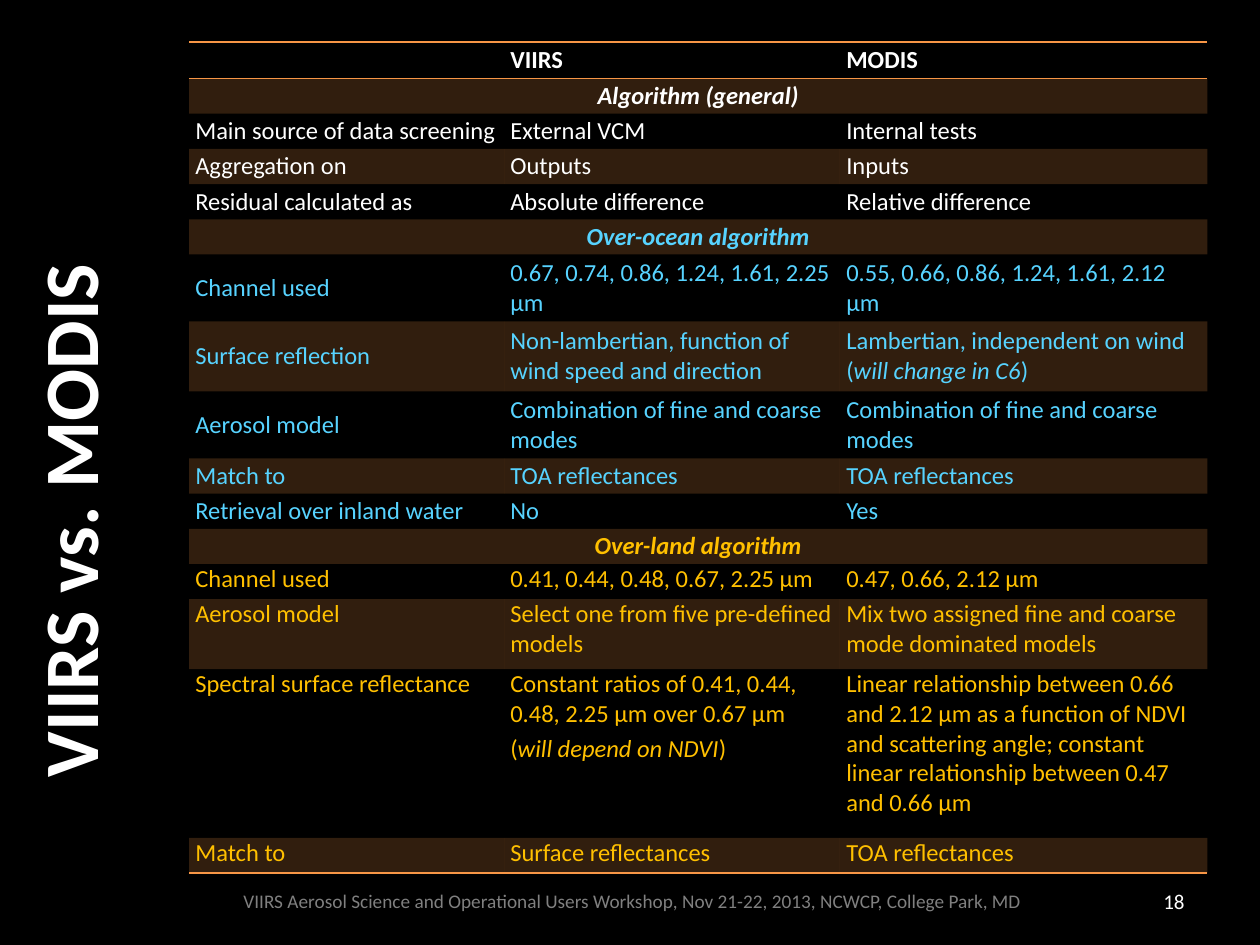
from lxml import etree
from pptx import Presentation
from pptx.dml.color import RGBColor
from pptx.enum.text import MSO_ANCHOR, PP_ALIGN
from pptx.oxml.ns import qn
from pptx.util import Pt

LEFT, CENTER, RIGHT = PP_ALIGN.LEFT, PP_ALIGN.CENTER, PP_ALIGN.RIGHT
TOP, MIDDLE = MSO_ANCHOR.TOP, MSO_ANCHOR.MIDDLE
NO_STYLE = "{2D5ABB26-0587-4C30-8999-92F81FD0307C}"
COLORS = {
    "background": "000000", "text": "FFFFFF", "footer": "808080",
    "accent": "F79646", "ocean": "57D3FF", "land": "FFC000",
}

# Table content: asterisks enclose italics, a line break starts a paragraph
HEADER = ("", "VIIRS", "MODIS")
SECTIONS = [
    ("Algorithm (general)", "text", MIDDLE, [
        ("Main source of data screening", "External VCM", "Internal tests"),
        ("Aggregation on", "Outputs", "Inputs"),
        ("Residual calculated as", "Absolute difference", "Relative difference"),
    ]),
    ("Over-ocean algorithm", "ocean", MIDDLE, [
        ("Channel used", "0.67, 0.74, 0.86, 1.24, 1.61, 2.25 µm",
         "0.55, 0.66, 0.86, 1.24, 1.61, 2.12 µm"),
        ("Surface reflection", "Non-lambertian, function of wind speed and direction",
         "Lambertian, independent on wind (*will change in C6*)"),
        ("Aerosol model", "Combination of fine and coarse modes",
         "Combination of fine and coarse modes"),
        ("Match to", "TOA reflectances", "TOA reflectances"),
        ("Retrieval over inland water", "No", "Yes"),
    ]),
    ("Over-land algorithm", "land", TOP, [
        ("Channel used", "0.41, 0.44, 0.48, 0.67, 2.25 µm", "0.47, 0.66, 2.12 µm"),
        ("Aerosol model", "Select one from five pre-defined models",
         "Mix two assigned fine and coarse mode dominated models"),
        ("Spectral surface reflectance",
         "Constant ratios of 0.41, 0.44, 0.48, 2.25 µm over 0.67 µm\n(*will depend on NDVI*)",
         "Linear relationship between 0.66 and 2.12 µm as a function of NDVI and "
         "scattering angle; constant linear relationship between 0.47 and 0.66 µm"),
        ("Match to", "Surface reflectances", "TOA reflectances"),
    ]),
]
COLUMN_WIDTHS = (180, 192, 210)
ROW_HEIGHT = 20.1
TALL_ROWS = {0: 20.9, 6: 38.3, 7: 40, 8: 38.3, 13: 40, 14: 96.5}


class SlideBuilder:
    font_name = "Calibri"

    def __init__(self, deck):
        self.slide = deck.slides.add_slide(deck.slide_layouts[5])
        fill = self.slide.background.fill
        fill.solid()
        fill.fore_color.rgb = RGBColor.from_string(COLORS["background"])

    def style(self, para, size, color, align=LEFT, bold=False, italic=None):
        para.alignment = align
        font = para.font
        font.name, font.size, font.bold = self.font_name, Pt(size), bold
        font.italic = italic
        font.color.rgb = RGBColor.from_string(COLORS[color])

    def title(self, text, left, top, width, height):
        box = self.slide.shapes.title
        box.left, box.top, box.width, box.height = map(Pt, (left, top, width, height))
        box.rotation = 270
        box.text_frame.text = text
        box.text_frame.vertical_anchor = MIDDLE
        self.style(box.text_frame.paragraphs[0], 44, "text", CENTER, bold=True)

    def text(self, text, left, top, width, height, size, color, align=LEFT):
        box = self.slide.shapes.add_textbox(*map(Pt, (left, top, width, height)))
        frame = box.text_frame
        frame.word_wrap = True
        frame.vertical_anchor = MIDDLE
        frame.text = text
        self.style(frame.paragraphs[0], size, color, align)

    def table(self, left, top, widths, heights):
        frame = self.slide.shapes.add_table(
            len(heights), len(widths), Pt(left), Pt(top), Pt(sum(widths)), Pt(sum(heights)))
        next(frame.element.iter(qn("a:tableStyleId"))).text = NO_STYLE
        table = frame.table
        table.first_row = table.horz_banding = False
        for column, width in zip(table.columns, widths):
            column.width = Pt(width)
        for row, height in zip(table.rows, heights):
            row.height = Pt(height)
        return table

    def cell(self, cell, text, color, anchor=MIDDLE, align=LEFT, bold=False,
             italic=None, after=3):
        cell.margin_left = cell.margin_right = Pt(3.6)
        cell.margin_top = cell.margin_bottom = 0
        cell.vertical_anchor = anchor
        frame = cell.text_frame
        for index, line in enumerate(text.split("\n")):
            para = frame.add_paragraph() if index else frame.paragraphs[0]
            self.style(para, 14, color, align, bold, italic)
            para.space_after = Pt(after)
            for part, words in enumerate(line.split("*")):
                if words:
                    span = para.add_run()
                    span.text = words
                    if part % 2:
                        span.font.italic = True
        if not text:
            etree.SubElement(frame.paragraphs[0]._p, qn("a:endParaRPr"), sz="1400")

    def rule(self, cell, sides):
        properties = cell._tc.get_or_add_tcPr()
        for index, side in enumerate(sides):
            line = etree.Element(qn(f"a:ln{side}"), w=str(Pt(1)))
            fill = etree.SubElement(line, qn("a:solidFill"))
            etree.SubElement(fill, qn("a:srgbClr"), val=COLORS["accent"])
            properties.insert(index, line)

    def band(self, cell):
        cell.fill.solid()
        cell.fill.fore_color.rgb = RGBColor.from_string(COLORS["accent"])
        color = next(cell._tc.tcPr.iter(qn("a:srgbClr")))
        etree.SubElement(color, qn("a:alpha"), val="20000")


def main():
    deck = Presentation()
    deck.slide_width, deck.slide_height = Pt(720), Pt(540)
    page = SlideBuilder(deck)

    # Title and footer
    page.title("VIIRS vs. MODIS", -204.5, 258.5, 486, 77.8)
    page.text("VIIRS Aerosol Science and Operational Users Workshop, Nov 21-22, 2013, "
              "NCWCP, College Park, MD", 132, 500.5, 462, 28.8, 11, "footer")
    page.text("18", 606, 500.5, 78, 28.8, 12, "text", RIGHT)

    # Comparison table
    row_count = 1 + sum(1 + len(rows) for *_, rows in SECTIONS)
    heights = [TALL_ROWS.get(index, ROW_HEIGHT) for index in range(row_count)]
    table = page.table(108, 24, COLUMN_WIDTHS, heights)
    for column, text in enumerate(HEADER):
        page.cell(table.cell(0, column), text, "text", bold=True, after=0)
    row = 1
    for heading, color, anchor, rows in SECTIONS:
        table.cell(row, 0).merge(table.cell(row, len(HEADER) - 1))
        page.cell(table.cell(row, 0), heading, color, align=CENTER, bold=True, italic=True)
        for row, texts in enumerate(rows, row + 1):
            for column, text in enumerate(texts):
                page.cell(table.cell(row, column), text, color, anchor)
        row += 1

    # Bands on every second row, rules around the header and at the bottom
    for index in range(row_count):
        for cell in table.rows[index].cells:
            if index % 2:
                page.band(cell)
            else:
                cell.fill.background()
            if index == 0:
                page.rule(cell, "TB")
            elif index == row_count - 1:
                page.rule(cell, "B")

    deck.save("out.pptx")


if __name__ == "__main__":
    main()
